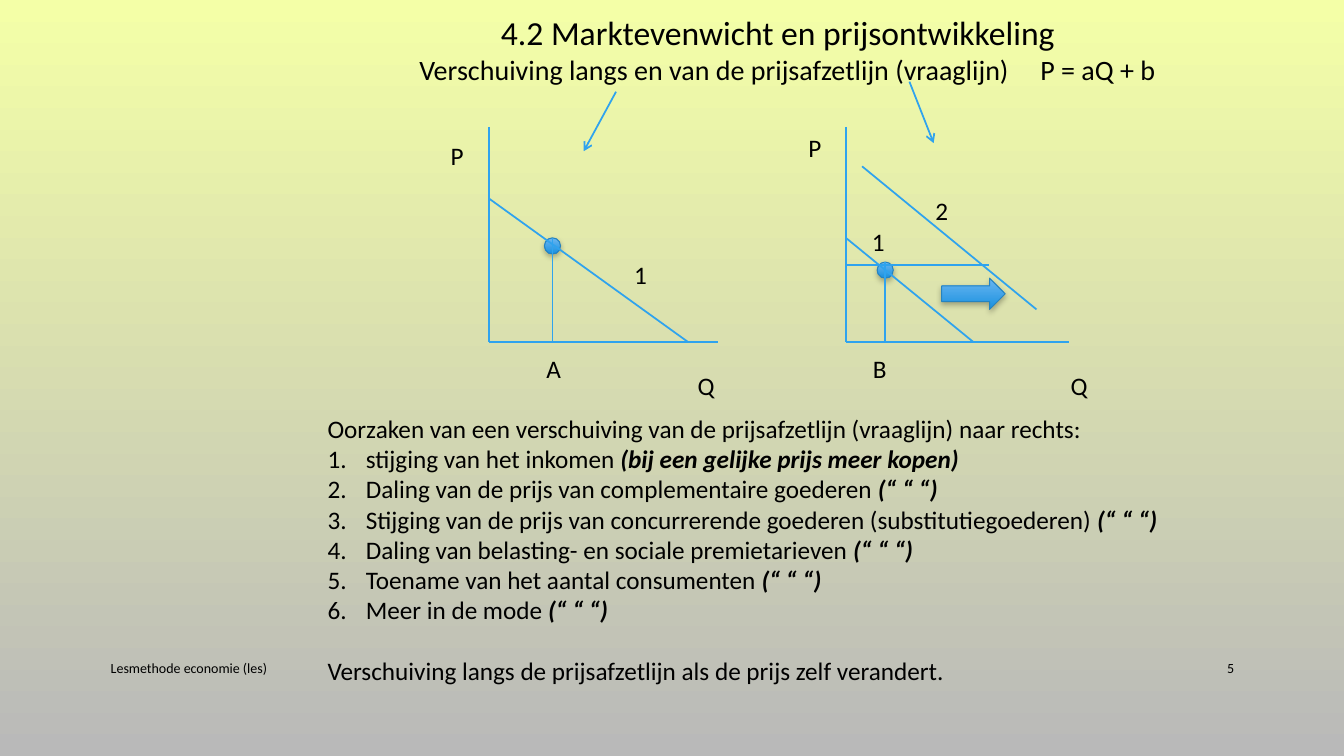
from lxml import etree
from pptx import Presentation
from pptx.dml.color import RGBColor
from pptx.enum.shapes import MSO_CONNECTOR, MSO_SHAPE
from pptx.enum.text import MSO_ANCHOR, PP_ALIGN
from pptx.oxml.ns import qn
from pptx.util import Inches, Pt

STRAIGHT = MSO_CONNECTOR.STRAIGHT
OVAL, RIGHT_ARROW = MSO_SHAPE.OVAL, MSO_SHAPE.RIGHT_ARROW
TOP, MIDDLE = MSO_ANCHOR.TOP, MSO_ANCHOR.MIDDLE
LEFT, RIGHT = PP_ALIGN.LEFT, PP_ALIGN.RIGHT
BLACK, BLUE, DARK_BLUE = "000000", "2FA3EE", "2683BF"
MARKER_SIZE = 0.16
AXIS_HEIGHT = 2.13

CAUSES = [
    ("stijging van het inkomen ", "(bij een gelijke prijs meer kopen)"),
    ("Daling van de prijs van complementaire goederen ", "(“ “ “)"),
    ("Stijging van de prijs van concurrerende goederen (substitutiegoederen) ", "(“ “ “)"),
    ("Daling van belasting- en sociale premietarieven ", "(“ “ “)"),
    ("Toename van het aantal consumenten ", "(“ “ “)"),
    ("Meer in de mode ", "(“ “ “)"),
]


def color(value):
    return RGBColor.from_string(value)


def set_gradient(fill, start, end):
    fill.gradient()
    fill.gradient_angle = 270
    for stop, value in zip(fill.gradient_stops, (start, end)):
        stop.color.rgb = color(value)


def add_run(paragraph, text, size, emphasis=False):
    run = paragraph.add_run()
    run.text = text
    run.font.name = "Calibri"
    run.font.size = Pt(size)
    run.font.color.rgb = color(BLACK)
    run.font.bold = run.font.italic = emphasis


def add_frame(slide, left, top, width, height, anchor=TOP):
    box = slide.shapes.add_textbox(Inches(left), Inches(top), Inches(width), Inches(height))
    frame = box.text_frame
    frame.word_wrap = True
    frame.vertical_anchor = anchor
    return frame


def add_label(slide, text, left, top, width=0.4, height=0.4, size=18, anchor=TOP, align=LEFT):
    paragraph = add_frame(slide, left, top, width, height, anchor).paragraphs[0]
    paragraph.alignment = align
    add_run(paragraph, text, size)


def add_line(slide, start, end, arrow=False):
    points = [Inches(value) for value in (*start, *end)]
    connector = slide.shapes.add_connector(STRAIGHT, *points)
    connector.line.color.rgb = color(BLUE)
    connector.line.width = Pt(1.25)
    properties = connector._element.spPr
    if arrow:
        etree.SubElement(properties.find(qn("a:ln")), qn("a:tailEnd"), type="arrow")
    etree.SubElement(properties, qn("a:effectLst"))


def add_glossy_shape(slide, kind, left, top, width, height):
    shape = slide.shapes.add_shape(kind, Inches(left), Inches(top), Inches(width), Inches(height))
    set_gradient(shape.fill, "6CB6F1", "1891DF")
    shape.line.color.rgb = color(DARK_BLUE)
    shape.line.width = Pt(0.75)
    shape.shadow.inherit = False
    effects = shape._element.spPr.find(qn("a:effectLst"))
    shadow = etree.SubElement(effects, qn("a:outerShdw"), blurRad=str(Pt(4)),
                              dist=str(Pt(2)), dir="5400000", rotWithShape="0")
    shadow_color = etree.SubElement(shadow, qn("a:srgbClr"), val=BLACK)
    etree.SubElement(shadow_color, qn("a:alpha"), val="28000")


def add_graph(slide, left, top, width, lines, marker, labels):
    def place(x, y):
        return left + x, top + y

    marker_x, marker_y = marker
    axes = [((0, 0), (0, AXIS_HEIGHT)), ((0, AXIS_HEIGHT), (width, AXIS_HEIGHT))]
    drop = ((marker_x, marker_y), (marker_x, AXIS_HEIGHT))
    add_glossy_shape(slide, OVAL, *place(marker_x - MARKER_SIZE / 2, marker_y),
                     MARKER_SIZE, MARKER_SIZE)
    for start, end in [*axes, *lines, drop]:
        add_line(slide, place(*start), place(*end))
    for text, x, y in labels:
        add_label(slide, text, *place(x, y))


def add_heading(slide, left, top):
    add_label(slide, "4.2 Marktevenwicht en prijsontwikkeling",
              left + 0.81, top, 5.96, 0.5, 24)
    add_label(slide, "Verschuiving langs en van de prijsafzetlijn (vraaglijn)",
              left, top + 0.4, 6.15, 0.44, 20)
    add_label(slide, "P = aQ + b", left + 6.16, top + 0.4, 1.71, 0.44, 20)
    add_line(slide, (left + 2.05, top + 0.84), (left + 1.73, top + 1.43), arrow=True)
    add_line(slide, (left + 4.96, top + 0.74), (left + 5.2, top + 1.35), arrow=True)


def add_causes(slide, left, top, width, height):
    frame = add_frame(slide, left, top, width, height)
    add_run(frame.paragraphs[0],
            "Oorzaken van een verschuiving van de prijsafzetlijn (vraaglijn) naar rechts:", 18)
    for cause, note in CAUSES:
        paragraph = frame.add_paragraph()
        properties = paragraph._p.get_or_add_pPr()
        properties.set("marL", str(Inches(0.38)))
        properties.set("indent", str(Inches(-0.38)))
        etree.SubElement(properties, qn("a:buFont"), typeface="+mj-lt")
        etree.SubElement(properties, qn("a:buAutoNum"), type="arabicPeriod")
        add_run(paragraph, cause, 18)
        add_run(paragraph, note, 18, emphasis=True)
    closing = frame.add_paragraph()
    closing.space_before = Pt(22)
    add_run(closing, "Verschuiving langs de prijsafzetlijn als de prijs zelf verandert.", 18)


def add_footer(slide, left, top, width, height):
    add_label(slide, "Lesmethode economie (les)", left, top, 2.1, height, 10, MIDDLE)
    add_label(slide, "5", left + width - 0.84, top, 0.84, height, 10, MIDDLE, RIGHT)


def main():
    presentation = Presentation()
    presentation.slide_width = Inches(13.33)
    presentation.slide_height = Inches(7.5)
    slide = presentation.slides.add_slide(presentation.slide_layouts[6])
    set_gradient(slide.background.fill, "F4FFA7", "B9B9B9")

    add_footer(slide, 1, 6.43, 11.34, 0.4)
    add_heading(slide, 4.06, 0.07)
    add_graph(
        slide, 4.85, 1.26, 2.27,
        lines=[((0, 0.71), (1.97, AXIS_HEIGHT))],
        marker=(0.63, 1.1),
        labels=[("P", -0.48, 0.08), ("Q", 1.97, 2.36), ("A", 0.47, 2.2), ("1", 1.34, 1.26)],
    )
    add_graph(
        slide, 8.39, 1.26, 2.21,
        lines=[((0.16, 0.39), (1.89, 1.81)), ((0, 1.1), (1.26, AXIS_HEIGHT)),
               ((0, 1.37), (1.42, 1.37))],
        marker=(0.39, 1.34),
        labels=[("P", -0.47, 0), ("Q", 2.13, 2.36), ("B", 0.17, 2.2),
                ("2", 0.79, 0.63), ("1", 0.16, 0.94)],
    )
    add_glossy_shape(slide, RIGHT_ARROW, 9.34, 2.76, 0.63, 0.31)
    add_causes(slide, 3.15, 4.05, 8.78, 2.83)
    presentation.save("out.pptx")


if __name__ == "__main__":
    main()
